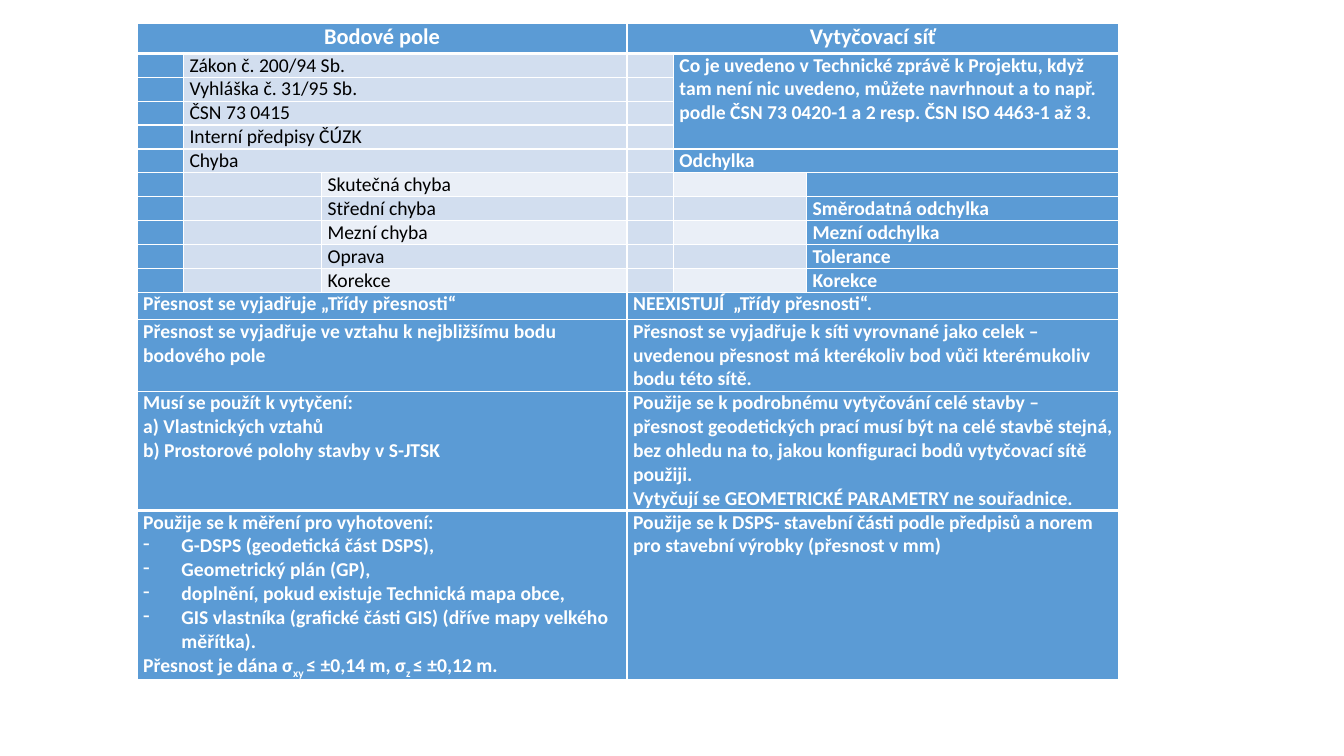
from dataclasses import dataclass
from itertools import product

from lxml.etree import SubElement
from pptx import Presentation
from pptx.dml.color import RGBColor
from pptx.enum.text import PP_ALIGN as Align
from pptx.oxml import parse_xml
from pptx.oxml.ns import nsdecls, qn
from pptx.util import Inches, Pt


@dataclass(frozen=True)
class Theme:
    """Colours, type sizes and line widths of the slide."""
    font: str = "Calibri"
    strong: str = "5B9BD5"
    band: str = "D2DEEF"
    pale: str = "EAEFF7"
    light_text: str = "FFFFFF"
    dark_text: str = "000000"
    rule: str = "FFFFFF"
    header_size: int = 16
    body_size: int = 14
    thin: int = 1
    thick: int = 3


THEME = Theme()
COLUMN_WIDTHS = [0.46, 1.37, 3.03, 0.46, 1.32, 3.1]
ROW_HEIGHTS = [0.3] + [0.23] * 10 + [0.27, 0.7, 1.16, 1.67]
LAST_ROW = len(ROW_HEIGHTS) - 1
HEADERS = ["Bodové pole", "Vytyčovací síť"]
REGULATIONS = ["Zákon č. 200/94 Sb.", "Vyhláška č. 31/95 Sb.", "ČSN 73 0415",
               "Interní předpisy ČÚZK"]
PROJECT_NOTE = ("Co je uvedeno v Technické zprávě k Projektu, když tam není nic uvedeno, "
                "můžete navrhnout a to např. podle ČSN 73 0420-1 a 2 resp. "
                "ČSN ISO 4463-1 až 3.")
ERROR_TERMS = [("Skutečná chyba", ""), ("Střední chyba", "Směrodatná odchylka"),
               ("Mezní chyba", "Mezní odchylka"), ("Oprava", "Tolerance"),
               ("Korekce", "Korekce")]
COMPARISONS = [
    (["Přesnost se vyjadřuje „Třídy přesnosti“"],
     ["NEEXISTUJÍ  „Třídy přesnosti“."]),
    (["Přesnost se vyjadřuje ve vztahu k nejbližšímu bodu bodového pole"],
     ["Přesnost se vyjadřuje k síti vyrovnané jako celek – uvedenou přesnost má "
      "kterékoliv bod vůči kterémukoliv bodu této sítě."]),
    (["Musí se použít k vytyčení:", "a) Vlastnických vztahů",
      "b) Prostorové polohy stavby v S-JTSK"],
     ["Použije se k podrobnému vytyčování celé stavby – přesnost geodetických prací "
      "musí být na celé stavbě stejná, bez ohledu na to, jakou konfiguraci bodů "
      "vytyčovací sítě použiji.",
      "Vytyčují se GEOMETRICKÉ PARAMETRY ne souřadnice."]),
]
SURVEY_USES = ["G-DSPS (geodetická část DSPS),", "Geometrický plán (GP),",
               "doplnění, pokud existuje Technická mapa obce,",
               "GIS vlastníka (grafické části GIS) (dříve mapy velkého měřítka)."]
ACCURACY = ["Přesnost je dána σ", "xy ", "≤ ±0,14 m, σ", "z ", "≤ ±0,12 m."]
BUILDING_USE = ("Použije se k DSPS- stavební části podle předpisů a norem pro stavební "
                "výrobky (přesnost v mm)")


def assign(target, values):
    """Set every attribute in values on target."""
    for name, value in values.items():
        setattr(target, name, value)


def add_borders(cell, row):
    """Draw the white rules, thick below the header and above the last row."""
    widths = {"L": THEME.thin, "R": THEME.thin,
              "T": THEME.thick if row in (1, LAST_ROW) else THEME.thin,
              "B": THEME.thick if row in (0, LAST_ROW - 1) else THEME.thin}
    properties = cell._tc.get_or_add_tcPr()
    for index, (side, width) in enumerate(widths.items()):
        properties.insert(index, parse_xml(
            f'<a:ln{side} {nsdecls("a")} w="{Pt(width)}"><a:solidFill>'
            f'<a:srgbClr val="{THEME.rule}"/></a:solidFill></a:ln{side}>'))


def prepare_cells(table):
    """Give every cell its margins, rules and empty-line size."""
    margins = dict(margin_left=Inches(0.06), margin_right=Inches(0.06),
                   margin_top=0, margin_bottom=0)
    for row, column in product(range(len(ROW_HEIGHTS)), range(len(COLUMN_WIDTHS))):
        cell = table.cell(row, column)
        assign(cell, margins)
        add_borders(cell, row)
        SubElement(cell.text_frame.paragraphs[0]._p, qn("a:endParaRPr"),
                   sz=str(THEME.body_size * 100))


def add_bullet(para):
    """Make para a dash list item with a hanging indent."""
    properties = para._p.get_or_add_pPr()
    properties.set("marL", str(Inches(0.38)))
    properties.set("indent", str(-Inches(0.38)))
    SubElement(properties, qn("a:buChar"), char="-")


def add_spans(para, parts, strong, size):
    """Write the parts, every second one as a subscript."""
    colour = THEME.light_text if strong else THEME.dark_text
    for index, part in enumerate(parts):
        span = para.add_run()
        span.text = part
        assign(span.font, dict(name=THEME.font, size=Pt(size), bold=strong))
        span.font.color.rgb = RGBColor.from_string(colour)
        if index % 2:
            span._r.get_or_add_rPr().set("baseline", "-25000")


def fill_cell(table, row, column, fill, lines=(), span=(1, 1), bullets=(),
              size=THEME.body_size, align=Align.LEFT):
    """Merge, colour and write one cell; a line is text or a list of parts."""
    cell = table.cell(row, column)
    if span != (1, 1):
        cell.merge(table.cell(row + span[0] - 1, column + span[1] - 1))
    cell.fill.solid()
    cell.fill.fore_color.rgb = RGBColor.from_string(fill)
    frame = cell.text_frame
    for index, line in enumerate(lines):
        para = frame.add_paragraph() if index else frame.paragraphs[0]
        para.alignment = align
        if index in bullets:
            add_bullet(para)
        parts = [line] if isinstance(line, str) else line
        add_spans(para, parts, fill == THEME.strong, size)


def fill_regulations(table):
    """Fill the rows of regulations and the row that heads the errors."""
    for row, text in enumerate(REGULATIONS + ["Chyba"], start=1):
        fill_cell(table, row, 0, THEME.strong)
        fill_cell(table, row, 1, THEME.band, [text], (1, 2))
        fill_cell(table, row, 3, THEME.band)
    fill_cell(table, 1, 4, THEME.strong, [PROJECT_NOTE], (len(REGULATIONS), 2))
    fill_cell(table, 5, 4, THEME.strong, ["Odchylka"], (1, 2))


def fill_error_terms(table):
    """Fill the rows that pair kinds of error with kinds of deviation."""
    for row, (error, deviation) in enumerate(ERROR_TERMS, start=6):
        shade = THEME.band if row % 2 else THEME.pale
        fill_cell(table, row, 0, THEME.strong)
        fill_cell(table, row, 1, THEME.band)
        fill_cell(table, row, 2, shade, [error])
        fill_cell(table, row, 3, THEME.band)
        fill_cell(table, row, 4, shade)
        fill_cell(table, row, 5, THEME.strong, [deviation] if deviation else [])


def fill_comparisons(table):
    """Fill the header and the two-part rows at the foot."""
    for column, text in zip((0, 3), HEADERS):
        fill_cell(table, 0, column, THEME.strong, [text], (1, 3),
                  size=THEME.header_size, align=Align.CENTER)
    for row, pair in enumerate(COMPARISONS, start=11):
        for column, lines in zip((0, 3), pair):
            fill_cell(table, row, column, THEME.strong, lines, (1, 3))
    survey = ["Použije se k měření pro vyhotovení:", *SURVEY_USES, ACCURACY]
    fill_cell(table, LAST_ROW, 0, THEME.strong, survey, (1, 3),
              bullets=range(1, len(SURVEY_USES) + 1))
    fill_cell(table, LAST_ROW, 3, THEME.strong, [BUILDING_USE], (1, 3))


def add_comparison_table(page):
    """Add the empty table with its column widths and row heights."""
    table = page.shapes.add_table(
        len(ROW_HEIGHTS), len(COLUMN_WIDTHS), Inches(1.36), Inches(0.23),
        Inches(sum(COLUMN_WIDTHS)), Inches(sum(ROW_HEIGHTS))).table
    for column, width in zip(table.columns, COLUMN_WIDTHS):
        column.width = Inches(width)
    for row, height in zip(table.rows, ROW_HEIGHTS):
        row.height = Inches(height)
    return table


def main():
    """Build the slide and save it."""
    deck = Presentation()
    assign(deck, dict(slide_width=Inches(13.33), slide_height=Inches(7.5)))
    page = deck.slides.add_slide(deck.slide_layouts[6])
    table = add_comparison_table(page)
    prepare_cells(table)
    fill_regulations(table)
    fill_error_terms(table)
    fill_comparisons(table)
    deck.save("out.pptx")


if __name__ == "__main__":
    main()
